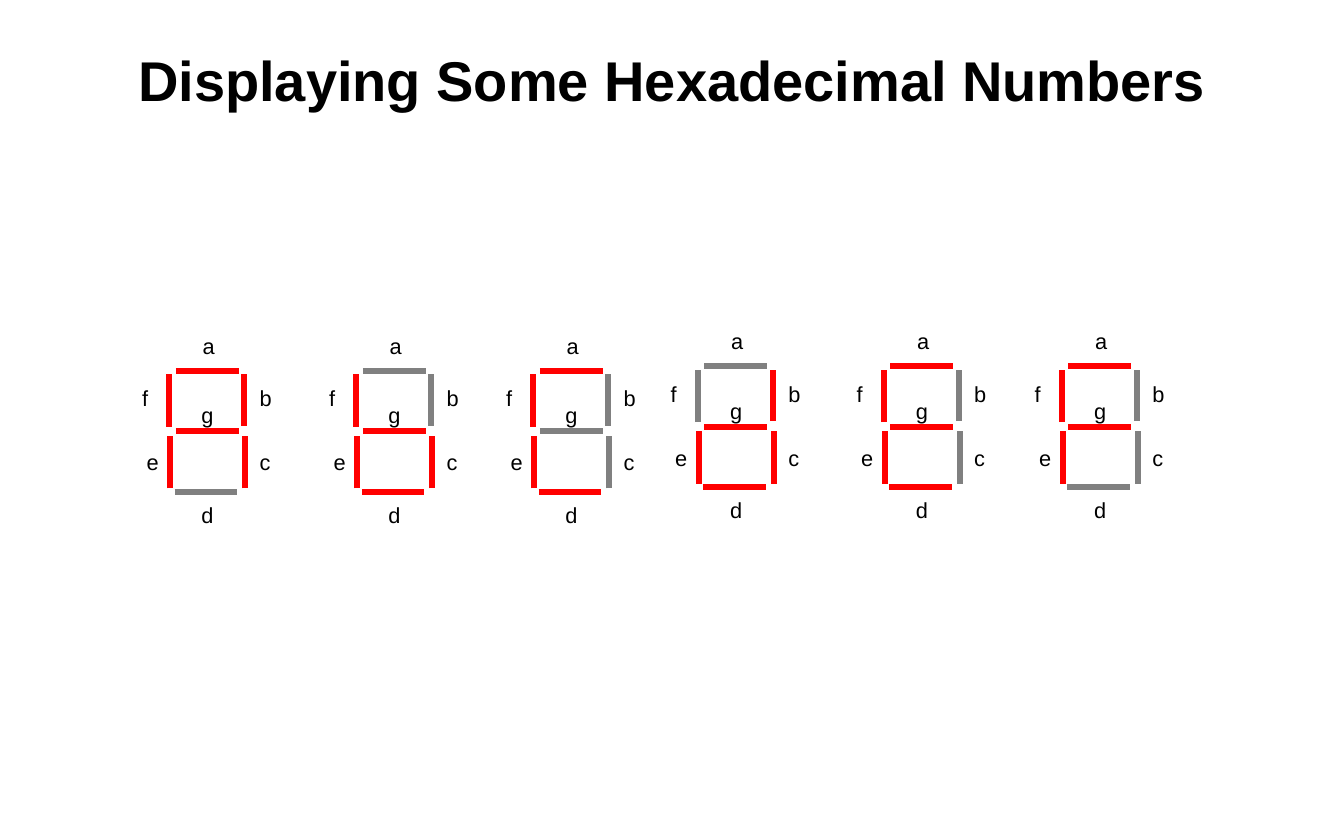
import pptx
import pptx.util
import pptx.dml.color
import pptx.enum.shapes
import pptx.enum.text
import pptx.oxml.ns
import lxml.etree

COLORS = {"lit": "FF0000", "unlit": "808080", "text": "000000"}

deck = pptx.Presentation()
deck.slide_width = pptx.util.Inches(12)
deck.slide_height = pptx.util.Inches(7.5)
slide = deck.slides.add_slide(deck.slide_layouts[5])

# Grid of 12 columns by 7.5 rows
COL = deck.slide_width / 12
ROW = deck.slide_height / 7.5


def place(x, y):
    """Turn columns and rows into slide lengths."""
    return round(x * COL), round(y * ROW)


def write(frame, text, size, bold=False):
    run = frame.paragraphs[0].add_run()
    run.text = text
    run.font.name = "Arial"
    run.font.size = pptx.util.Pt(size)
    run.font.bold = bold
    run.font.color.rgb = pptx.dml.color.RGBColor.from_string(COLORS["text"])


title = slide.shapes.title
title.left, title.top = place(0, 0.33)
title.width, title.height = place(12, 0.75)
title.text_frame.auto_size = pptx.enum.text.MSO_AUTO_SIZE.NONE
title.text_frame.vertical_anchor = pptx.enum.text.MSO_ANCHOR.MIDDLE
write(title.text_frame, "Displaying Some Hexadecimal Numbers", 36, bold=True)
title.text_frame.paragraphs[0].alignment = pptx.enum.text.PP_ALIGN.CENTER

# Segment: start and end of its bar, then corner and width of its label
SEGMENTS = {
    "a": ((0.40, 0.39), (0.96, 0.39), (0.54, 0), 0.31),
    "d": ((0.39, 1.47), (0.95, 1.47), (0.53, 1.51), 0.31),
    "g": ((0.40, 0.93), (0.96, 0.93), (0.53, 0.62), 0.31),
    "b": ((1.01, 0.88), (1.01, 0.42), (1.05, 0.47), 0.31),
    "c": ((1.02, 1.44), (1.02, 0.97), (1.05, 1.04), 0.30),
    "f": ((0.34, 0.89), (0.34, 0.42), (0, 0.47), 0.26),
    "e": ((0.35, 1.44), (0.35, 0.97), (0.04, 1.04), 0.31),
}

# Lit segments and corner of each digit, A to F
DIGITS = [
    ("abcefg", 1.17, 2.92),
    ("cdefg", 2.84, 2.92),
    ("adef", 4.42, 2.92),
    ("bcdeg", 5.89, 2.88),
    ("adefg", 7.55, 2.88),
    ("aefg", 9.14, 2.88),
]

for lit, left, top in DIGITS:
    digit = slide.shapes.add_group_shape().shapes
    for name, (start, end, corner, width) in SEGMENTS.items():
        bar = digit.add_connector(
            pptx.enum.shapes.MSO_CONNECTOR.STRAIGHT,
            *place(left + start[0], top + start[1]),
            *place(left + end[0], top + end[1]))
        bar.line.width = pptx.util.Pt(4)
        bar.line.color.rgb = pptx.dml.color.RGBColor.from_string(
            COLORS["lit" if name in lit else "unlit"])
        lxml.etree.SubElement(bar._element.spPr, pptx.oxml.ns.qn("a:effectLst"))

    for name, (start, end, corner, width) in SEGMENTS.items():
        label = digit.add_textbox(
            *place(left + corner[0], top + corner[1]), *place(width, 0.34))
        label.text_frame.word_wrap = name == "g"
        label.text_frame.auto_size = pptx.enum.text.MSO_AUTO_SIZE.SHAPE_TO_FIT_TEXT
        write(label.text_frame, name, 14)

deck.save("out.pptx")
